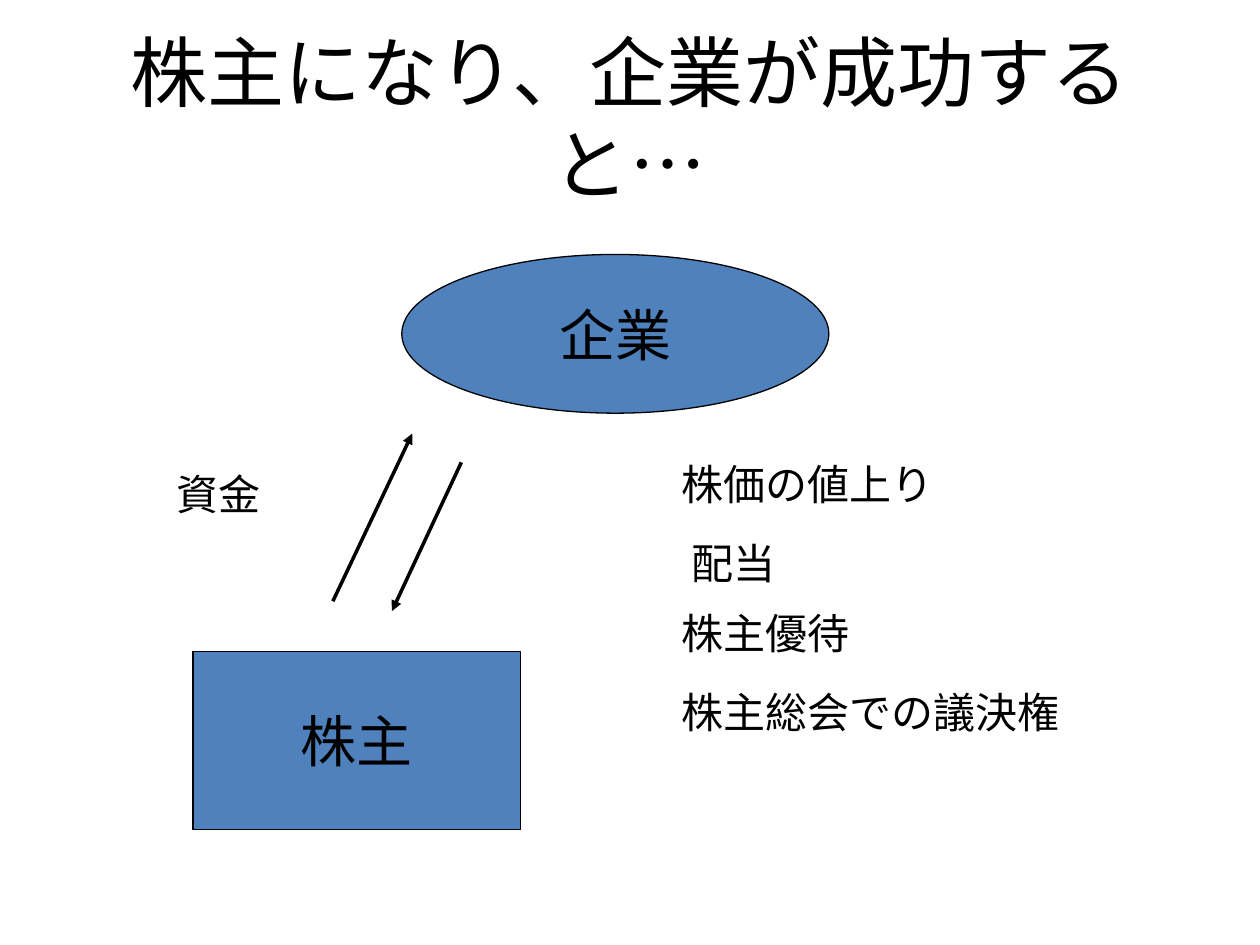
from lxml import etree
from pptx import Presentation
from pptx import util as u
from pptx.dml.color import RGBColor
from pptx.enum import shapes, text
from pptx.oxml.ns import qn

HUES = {"ink": "000000", "fill": "4F81BD"}


def hue(name):
    return RGBColor.from_string(HUES[name])


def write(shape, words, size=24, font="Times New Roman", align="LEFT",
          anchor="TOP", wrap=True):
    frame = shape.text_frame
    frame.word_wrap = wrap
    frame.vertical_anchor = getattr(text.MSO_ANCHOR, anchor)
    para = frame.paragraphs[0]
    para.alignment = getattr(text.PP_ALIGN, align)
    run = para.add_run()
    run.text = words
    run.font.size = u.Pt(size)
    run.font.name = font
    run.font.color.rgb = hue("ink")


deck = Presentation()
deck.slide_width, deck.slide_height = u.Cm(25.4), u.Cm(19.05)
slide = deck.slides.add_slide(deck.slide_layouts[6])
items = slide.shapes

# Title
title = items.add_textbox(u.Cm(1.27), u.Cm(0.76), u.Cm(22.86), u.Cm(3.18))
write(title, "株主になり、企業が成功すると…", size=44, font="Calibri",
      align="CENTER", anchor="MIDDLE")

# Company and shareholder
kinds = shapes.MSO_SHAPE
for words, kind, *box in [
    ("企業", kinds.OVAL, 8.1, 5.13, 8.61, 3.2),
    ("株主", kinds.RECTANGLE, 3.89, 13.13, 6.6, 3.6),
]:
    node = items.add_shape(kind, *map(u.Cm, box))
    node.shadow.inherit = False
    node.fill.solid()
    node.fill.fore_color.rgb = hue("fill")
    node.line.color.rgb = hue("ink")
    node.line.width = u.Pt(0.75)
    write(node, words, size=32, font="Arial", align="CENTER",
          anchor="MIDDLE", wrap=False)

# Money up, rewards down
for ends in [(6.71, 12.12, 8.31, 8.74), (9.3, 9.32, 7.9, 12.32)]:
    arrow = items.add_connector(shapes.MSO_CONNECTOR.STRAIGHT,
                                *map(u.Cm, ends))
    arrow.line.color.rgb = hue("ink")
    arrow.line.width = u.Pt(2)
    etree.SubElement(arrow.line._get_or_add_ln(), qn("a:tailEnd"),
                     type="triangle")
    etree.SubElement(arrow._element.spPr, qn("a:effectLst"))

# Labels beside the arrows
for words, left, top, width, font in [
    ("資金", 3.3, 9.32, 3.6, "Times New Roman"),
    ("株価の値上り", 13.49, 9.12, 6.8, "Arial"),
    ("配当", 13.69, 10.72, 6.8, "Times New Roman"),
    ("株主優待", 13.49, 12.12, 6.6, "Times New Roman"),
    ("株主総会での議決権", 13.49, 13.72, 9, "Times New Roman"),
]:
    label = items.add_textbox(u.Cm(left), u.Cm(top), u.Cm(width), u.Cm(1.27))
    write(label, words, font=font)

deck.save("out.pptx")
